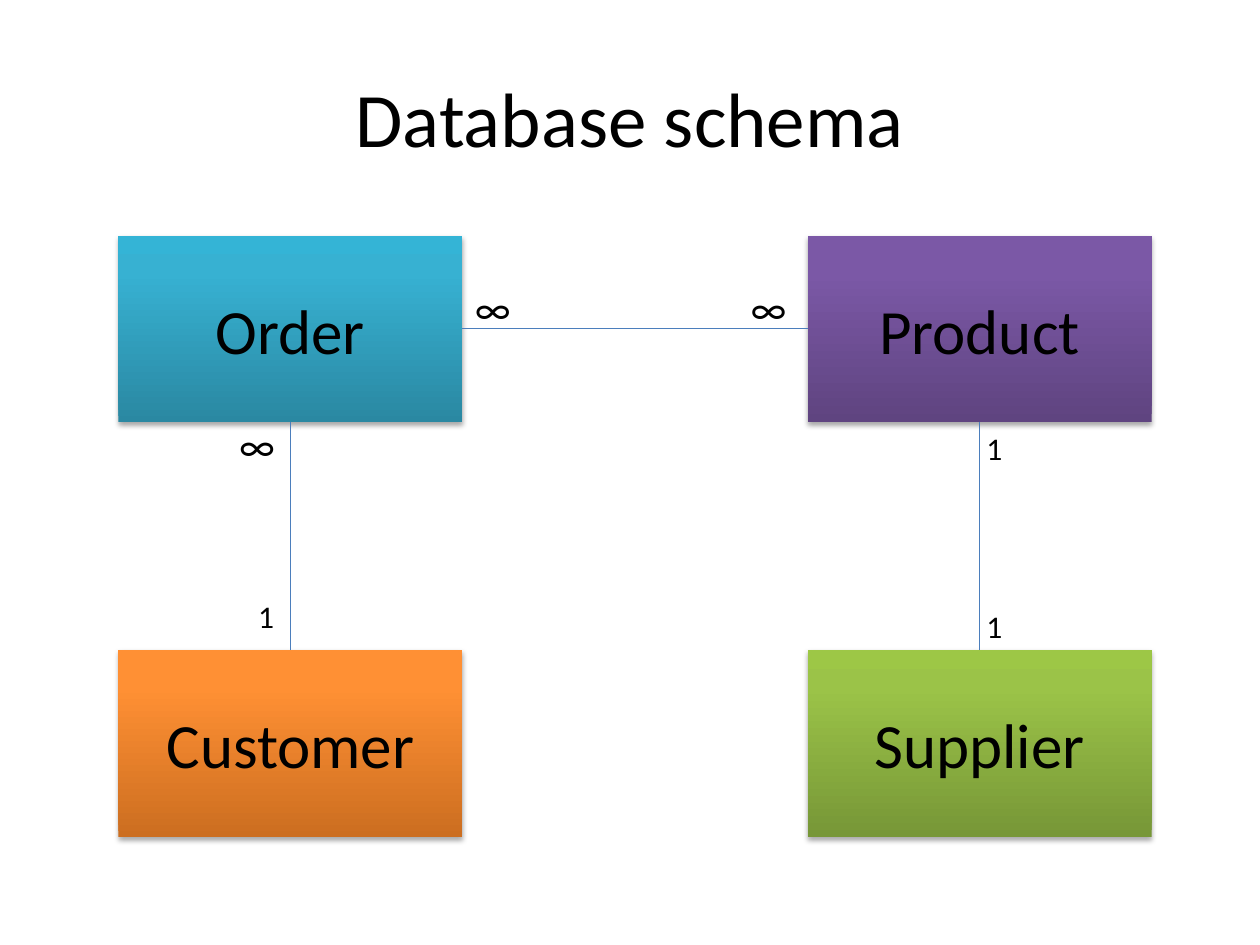
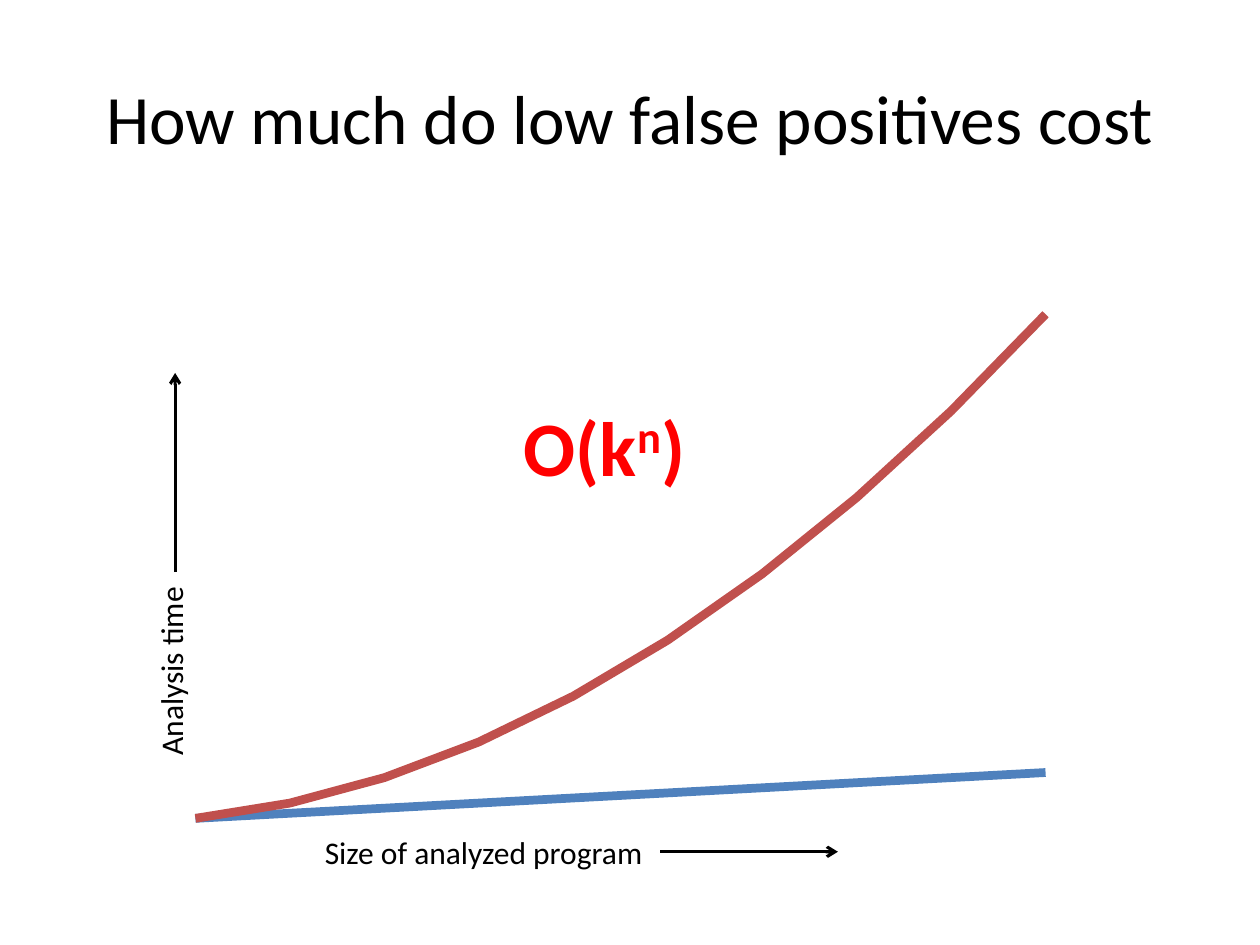
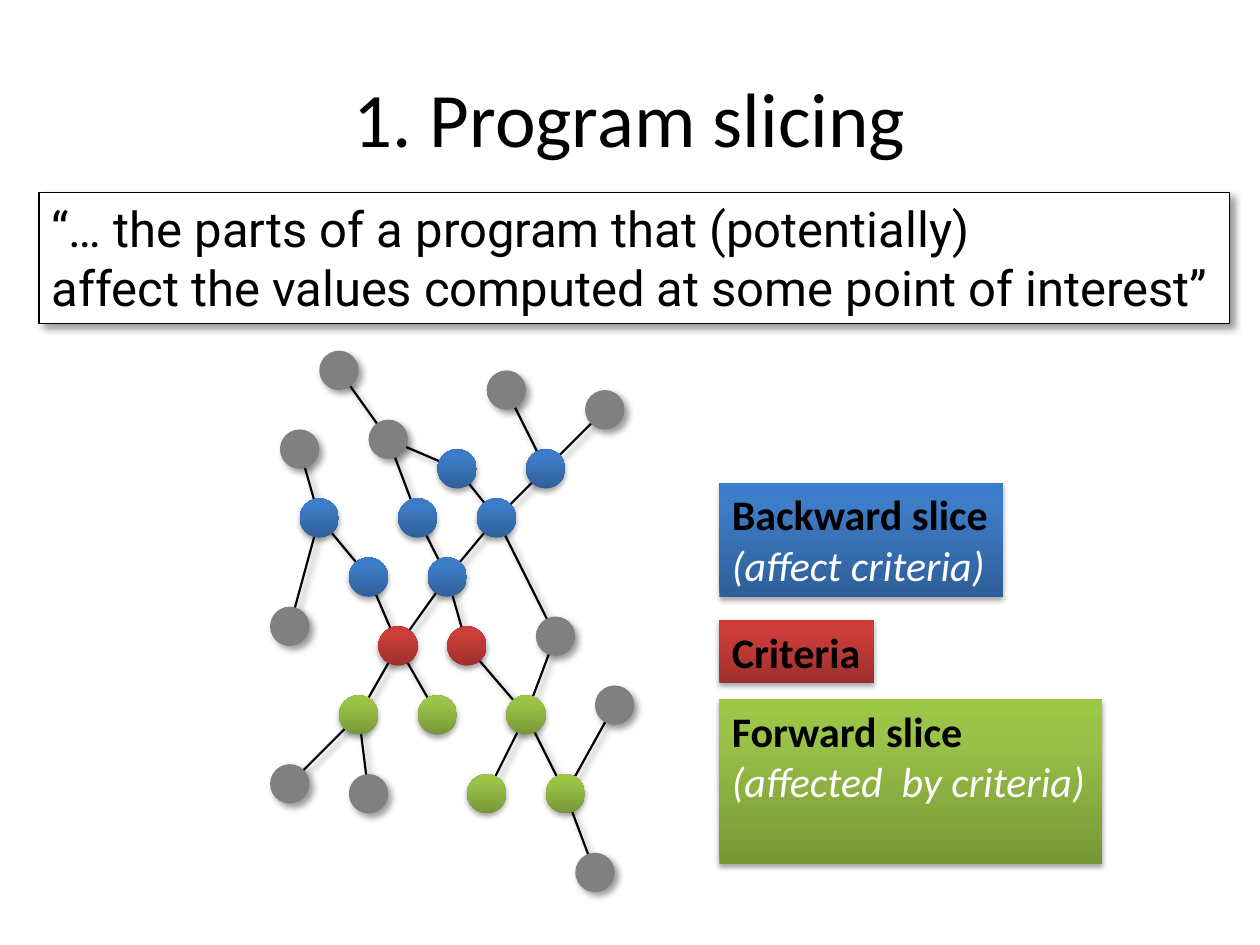
"""Builds three slides: a database schema, a cost chart and a program slicing graph."""
from copy import deepcopy
from dataclasses import dataclass, replace
from typing import Any, NamedTuple, Optional

from lxml.etree import SubElement
from pptx import Presentation
from pptx.chart.data import CategoryChartData
from pptx.dml.color import RGBColor
from pptx.enum.chart import XL_CHART_TYPE
from pptx.enum.shapes import MSO_CONNECTOR, MSO_SHAPE
from pptx.enum.text import MSO_ANCHOR, MSO_AUTO_SIZE, PP_ALIGN
from pptx.oxml.ns import qn
from pptx.slide import Slide
from pptx.util import Inches, Pt

WIDE, HIGH = 10, 7.5


class Frame(NamedTuple):
    left: float
    top: float
    width: float
    height: float

    def emu(self) -> list[int]:
        return [Inches(v) for v in self]


class Point(NamedTuple):
    x: float
    y: float


class Shade(NamedTuple):
    alpha: int
    blur: float
    dist: float
    angle: int


class Blend(NamedTuple):
    base: str
    mid: str
    top: str


@dataclass(frozen=True)
class Type:
    size: float
    color: str = "000000"
    font: str = "Calibri"
    bold: bool = False
    italic: bool = False


@dataclass(frozen=True)
class Theme:
    black: str = "000000"
    white: str = "FFFFFF"
    grey: str = "808080"
    link: str = "4B7EBC"
    flat: str = "4F81BD"
    steep: str = "C0504D"
    blue: Blend = Blend("2F5F99", "3D7CC7", "3A7CCB")
    red: Blend = Blend("9C2F2D", "CB3E3A", "CE3B37")
    green: Blend = Blend("779737", "9BC348", "9DC746")
    teal: Blend = Blend("2A88A2", "37B1D2", "34B4D6")
    violet: Blend = Blend("5F4480", "7B58A6", "7C57A8")
    orange: Blend = Blend("CC6E20", "FF9034", "FF9136")
    title: Type = Type(44)
    tight: Type = Type(39.6)
    box: Type = Type(36)
    sign: Type = Type(24)
    label: Type = Type(18)
    cost: Type = Type(44, "FF0000", bold=True)
    quote: Type = Type(28, font="Roboto")
    key: Type = Type(24, bold=True)
    hint: Type = Type(24, "FFFFFF", italic=True)
    soft: Shade = Shade(35, 3.1, 1.8, 90)
    cast: Shade = Shade(40, 4, 3, 45)


THEME = Theme()


class Entity(NamedTuple):
    name: str
    col: int
    row: int
    fill: Blend


class Mark(NamedTuple):
    text: str
    frame: Frame
    style: Type


class Layer(NamedTuple):
    nodes: dict[str, tuple[int, int]]
    edges: str
    fill: Any
    shade: Shade
    lines: list[str]
    frame: Optional[Frame]


def set_font(font: Any, style: Type) -> None:
    """Apply a type style to a font."""
    font.name, font.size = style.font, Pt(style.size)
    font.bold, font.italic = style.bold, style.italic
    font.color.rgb = RGBColor.from_string(style.color)


def write(frame: Any, lines: list[str], styles: list[Type], align: PP_ALIGN) -> None:
    """Fill a text frame with one styled paragraph per line."""
    frame.text = "\n".join(lines)
    for para, style in zip(frame.paragraphs, styles):
        para.alignment = align
        for run in para.runs:
            set_font(run.font, style)


def cast(item: Any, shade: Optional[Shade]) -> None:
    """Replace the inherited shadow of a shape or connector."""
    effects = SubElement(item._element.spPr, qn("a:effectLst"))
    if shade:
        outer = SubElement(effects, qn("a:outerShdw"), blurRad=str(Pt(shade.blur)),
                           dist=str(Pt(shade.dist)), dir=str(shade.angle * 60000),
                           algn="ctr", rotWithShape="0")
        color = SubElement(outer, qn("a:srgbClr"), val=THEME.black)
        SubElement(color, qn("a:alpha"), val=str(shade.alpha * 1000))


def paint(shape: Any, fill: Any) -> None:
    """Fill a shape with a plain colour or an upward three-stop blend."""
    if isinstance(fill, str):
        shape.fill.solid()
        shape.fill.fore_color.rgb = RGBColor.from_string(fill)
        return
    shape.fill.gradient()
    shape.fill.gradient_angle = 90
    stops = shape._element.spPr.find(".//" + qn("a:gsLst"))
    stops.append(deepcopy(stops[-1]))
    for stop, color, place in zip(shape.fill.gradient_stops, fill, (0, 0.8, 1)):
        stop.color.rgb = RGBColor.from_string(color)
        stop.position = place


def add_form(canvas: Any, kind: MSO_SHAPE, frame: Frame, fill: Any, shade: Shade,
             edge: Optional[str] = None) -> Any:
    """Add a filled preset shape with a shadow."""
    shape = canvas.add_shape(kind, *frame.emu())
    paint(shape, fill)
    if edge:
        shape.line.color.rgb = RGBColor.from_string(edge)
        shape.line.width = Pt(0.75)
    else:
        shape.line.fill.background()
    cast(shape, shade)
    return shape


def add_line(canvas: Any, start: Point, end: Point, color: str, width: float,
             shade: Optional[Shade] = None, arrow: bool = False) -> Any:
    """Add a straight connector between two points."""
    ends = [Inches(v) for v in (*start, *end)]
    line = canvas.add_connector(MSO_CONNECTOR.STRAIGHT, *ends)
    line.line.color.rgb = RGBColor.from_string(color)
    line.line.width = Pt(width)
    if arrow:
        SubElement(line._element.spPr.find(qn("a:ln")), qn("a:tailEnd"), type="arrow")
    cast(line, shade)
    return line


def add_mark(slide: Slide, mark: Mark) -> Any:
    """Add a small unwrapped text box."""
    box = slide.shapes.add_textbox(*mark.frame.emu())
    box.text_frame.word_wrap = False
    box.text_frame.auto_size = MSO_AUTO_SIZE.SHAPE_TO_FIT_TEXT
    write(box.text_frame, [mark.text], [mark.style], PP_ALIGN.LEFT)
    return box


def add_slide(deck: Any, title: str, style: Type = THEME.title) -> Slide:
    """Add a slide with a centred title."""
    slide = deck.slides.add_slide(deck.slide_layouts[5])
    head = slide.shapes.title
    head.left, head.top, head.width, head.height = Frame(0.5, 0.3, 9, 1.25).emu()
    head.text_frame.vertical_anchor = MSO_ANCHOR.MIDDLE
    write(head.text_frame, [title], [style], PP_ALIGN.CENTER)
    return slide


def draw_schema(deck: Any) -> None:
    """Draw four entities on a two by two grid and their relations."""
    slide = add_slide(deck, "Database schema")
    entities = [
        Entity("Product", 1, 0, THEME.violet),
        Entity("Order", 0, 0, THEME.teal),
        Entity("Supplier", 1, 1, THEME.green),
        Entity("Customer", 0, 1, THEME.orange),
    ]
    boxes = {}
    for item in entities:
        frame = Frame(0.94 + 5.47 * item.col, 1.87 + 3.29 * item.row, 2.73, 1.48)
        box = add_form(slide.shapes, MSO_SHAPE.RECTANGLE, frame, item.fill, THEME.soft)
        box.text_frame.vertical_anchor = MSO_ANCHOR.MIDDLE
        write(box.text_frame, [item.name], [THEME.box], PP_ALIGN.CENTER)
        boxes[item.name] = box
    links = [("Order", 2, "Customer", 0), ("Product", 2, "Supplier", 0),
             ("Order", 3, "Product", 1)]
    for first, out, last, into in links:
        line = add_line(slide.shapes, Point(0, 0), Point(1, 1), THEME.link, 0.75)
        line.begin_connect(boxes[first], out)
        line.end_connect(boxes[last], into)
    for left, top in ((1.95, 4.69), (7.73, 3.36), (7.73, 4.77)):
        add_mark(slide, Mark("1", Frame(left, top, 0.33, 0.4), THEME.label))
    for left, top in ((1.8, 3.28), (3.67, 2.19), (5.86, 2.19)):
        add_mark(slide, Mark("∞", Frame(left, top, 0.49, 0.5), THEME.sign))


def place_plot(chart: Any, frame: Frame) -> None:
    """Fix the inner plot area as shares of the chart."""
    area = chart._chartSpace.find(".//" + qn("c:plotArea"))
    for old in area.findall(qn("c:layout")):
        area.remove(old)
    layout = SubElement(area, qn("c:layout"))
    area.insert(0, layout)
    manual = SubElement(layout, qn("c:manualLayout"))
    parts = [("layoutTarget", "inner"), ("xMode", "edge"), ("yMode", "edge"),
             *zip("xywh", map(str, frame))]
    for tag, value in parts:
        SubElement(manual, qn(f"c:{tag}"), val=value)


def add_curves(slide: Slide) -> None:
    """Add the line chart of linear and quadratic growth."""
    steps = range(1, 11)
    data = CategoryChartData()
    data.categories = [str(n) for n in steps]
    data.add_series("Series 1", list(steps))
    data.add_series("Series 2", [n * n for n in steps])
    frame = Frame(1.02, 1.48, 7.81, 5.16)
    chart = slide.shapes.add_chart(XL_CHART_TYPE.LINE, *frame.emu(), data).chart
    set_font(chart.font, Type(10))
    chart.has_title = chart.has_legend = False
    axis = chart.value_axis
    axis.has_major_gridlines = False
    axis.minimum_scale, axis.maximum_scale = 0, 120
    axis.visible = chart.category_axis.visible = False
    chart.plots[0].vary_by_categories = False
    for series, color in zip(chart.plots[0].series, (THEME.flat, THEME.steep)):
        series.smooth = False
        series.format.line.width = Pt(5)
        series.format.line.color.rgb = RGBColor.from_string(color)
    place_plot(chart, Frame(0.02, 0.04, 0.96, 0.94))


def draw_cost(deck: Any) -> None:
    """Draw the growth of analysis time."""
    slide = add_slide(deck, "How much do low false positives cost", THEME.tight)
    add_curves(slide)
    box = slide.shapes.add_textbox(*Frame(4.06, 3.12, 3.59, 0.84).emu())
    box.text_frame.word_wrap = True
    para = box.text_frame.paragraphs[0]
    for text, raised in (("O(k", 0), ("n", 30000), (")", 0)):
        run = para.add_run()
        run.text = text
        set_font(run.font, THEME.cost)
        run._r.get_or_add_rPr().set("baseline", str(raised))
    add_mark(slide, Mark("Size of analyzed program", Frame(2.48, 6.56, 2.76, 0.4), THEME.label))
    time = add_mark(slide, Mark("Analysis time", Frame(0.58, 5.12, 1.55, 0.4), THEME.label))
    time.rotation = 270
    for start, end in ((Point(5.24, 6.76), Point(6.65, 6.76)),
                       (Point(1.39, 4.54), Point(1.39, 2.96))):
        add_line(slide.shapes, start, end, THEME.black, 1.75, arrow=True)


def draw_graph(slide: Slide, layers: list[Layer]) -> None:
    """Draw each layer as a group: edges, nodes and its key."""
    step = WIDE / 128
    spots = {name: Point(2.3 + col * step, 2.94 + row * step)
             for layer in layers for name, (col, row) in layer.nodes.items()}
    for layer in layers:
        canvas = slide.shapes.add_group_shape().shapes
        for edge in layer.edges.split():
            start, end = edge.split("-")
            add_line(canvas, spots[start], spots[end], THEME.black, 1.25, THEME.cast)
        for name in layer.nodes:
            x, y = spots[name]
            frame = Frame(x - 2 * step, y - 2 * step, 4 * step, 4 * step)
            add_form(canvas, MSO_SHAPE.OVAL, frame, layer.fill, layer.shade)
        if layer.frame:
            key = add_form(canvas, MSO_SHAPE.RECTANGLE, layer.frame, layer.fill, layer.shade)
            key.text_frame.word_wrap = False
            key.text_frame.vertical_anchor = MSO_ANCHOR.TOP
            write(key.text_frame, layer.lines, [THEME.key, THEME.hint], PP_ALIGN.LEFT)


def draw_slicing(deck: Any) -> None:
    """Draw the quotation and the sliced dependence graph."""
    slide = add_slide(deck, "1. Program slicing")
    quote = add_form(slide.shapes, MSO_SHAPE.RECTANGLE, Frame(0.31, 1.53, 9.45, 1.04),
                     THEME.white, THEME.cast, THEME.black)
    quote.text_frame.word_wrap = True
    quote.text_frame.vertical_anchor = MSO_ANCHOR.TOP
    write(quote.text_frame,
          ["“… the parts of a program that (potentially)",
           "affect the values computed at some point of interest”"],
          [THEME.quote] * 2, PP_ALIGN.LEFT)
    rest = Layer(
        {"g1": (32, 4), "g2": (22, 2), "g3": (27, 27), "g4": (33, 34), "g5": (31, 51),
         "g6": (8, 43), "g7": (1, 8), "g8": (10, 7), "g9": (5, 0), "g10": (0, 26),
         "g11": (0, 42)},
        "g10-b3 g11-f1 f3-g3 f5-g4 g3-b4 b6-g2 b6-g1 b7-g8 g8-g9 b3-g7 g6-f1 g5-f5 "
        "b5-g8 r2-b2 f3-r2 f2-r1 f1-r1 r1-b1 r1-b2",
        THEME.grey, THEME.cast, [], None)
    back = Layer(
        {"b1": (8, 21), "b2": (16, 21), "b3": (3, 15), "b4": (21, 15), "b5": (13, 15),
         "b6": (26, 10), "b7": (17, 10)},
        "b1-b3 b2-b5 b4-b7 b4-b2 b6-b4", THEME.blue, THEME.soft,
        ["Backward slice", "(affect criteria)"], Frame(5.71, 3.83, 2.25, 0.91))
    goal = Layer({"r1": (11, 28), "r2": (18, 28)}, "", THEME.red, THEME.soft,
                 ["Criteria"], Frame(5.71, 4.92, 1.23, 0.5))
    ahead = Layer(
        {"f1": (7, 35), "f2": (15, 35), "f3": (24, 35), "f4": (20, 43), "f5": (28, 43)},
        "f4-f3 f5-f3", THEME.green, THEME.soft,
        ["Forward slice", "(affected  by criteria)"], Frame(5.71, 5.55, 3.04, 1.31))
    draw_graph(slide, [rest, back, goal, ahead])


def main() -> None:
    """Build and save the deck."""
    deck = Presentation()
    deck.slide_width, deck.slide_height = Inches(WIDE), Inches(HIGH)
    for draw in (draw_schema, draw_cost, draw_slicing):
        draw(deck)
    deck.save("out.pptx")


if __name__ == "__main__":
    main()
